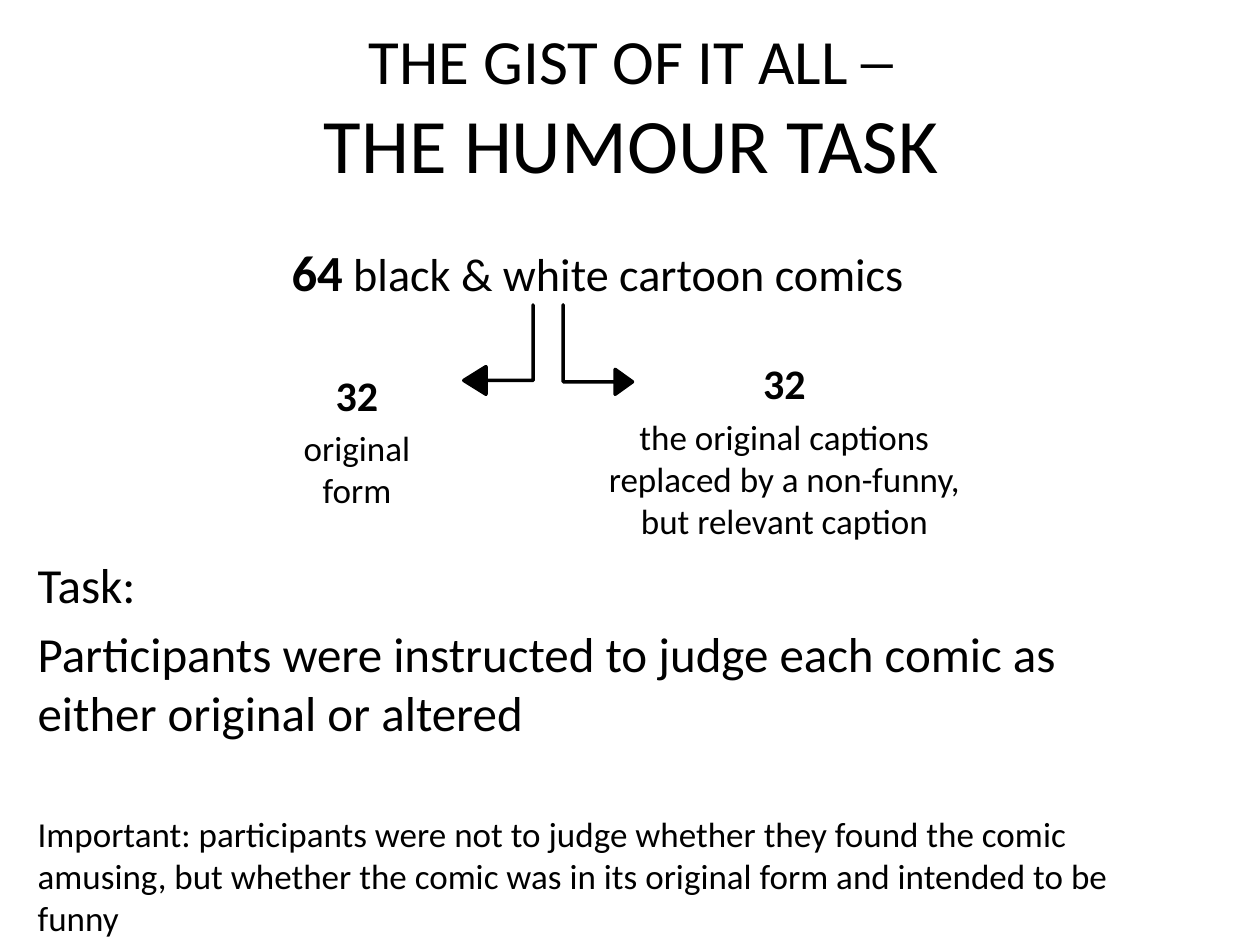
from pptx import Presentation
from pptx.dml.color import RGBColor
from pptx.enum.shapes import MSO_SHAPE
from pptx.enum.text import MSO_ANCHOR, MSO_AUTO_SIZE, PP_ALIGN
from pptx.util import Pt

TOP, MIDDLE, BOTTOM = MSO_ANCHOR.TOP, MSO_ANCHOR.MIDDLE, MSO_ANCHOR.BOTTOM
LEFT, CENTER = PP_ALIGN.LEFT, PP_ALIGN.CENTER
BENT_ARROW = MSO_SHAPE.BENT_ARROW

THEME = {
    "font": "Calibri", "ink": RGBColor(0, 0, 0), "line": 2,
    "title": 44, "kicker": 36, "total": 28.9, "total_label": 26.4,
    "count": 24, "task": 28, "small": 20,
}

TITLE = {
    "box": (36.7, 15.1, 648, 90), "anchor": MIDDLE, "align": CENTER,
    "paragraphs": [(0, [("THE GIST OF IT ALL ─\v", "kicker", False),
                        ("THE HUMOUR TASK", "title", False)])],
}
BODIES = [
    {"box": (26.6, 137.5, 630, 62), "anchor": BOTTOM, "align": CENTER, "bottom": 27,
     "paragraphs": [(0, [("64", "total", True),
                         (" black & white cartoon comics", "total_label", False)])]},
    {"box": (154, 207.5, 100, 108), "anchor": TOP, "align": CENTER,
     "paragraphs": [(0, [("32", "count", True)]),
                    (4, [("original form", "small", False)])]},
    {"box": (14.4, 281.5, 641, 258.5), "anchor": BOTTOM, "align": LEFT,
     "paragraphs": [(0, [("Task:", "task", False)]),
                    (6, [("Participants were instructed to judge each comic as "
                          "either original or altered", "task", False)]),
                    (41, [("Important: participants were not to judge whether they found "
                           "the comic amusing, but whether the comic was in its original "
                           "form and intended to be funny", "small", False)])]},
    {"box": (332, 201, 232.5, 234.5), "anchor": TOP, "align": CENTER,
     "paragraphs": [(0, [("32", "count", True)]),
                    (4, [("the original captions replaced by a non-funny, "
                          "but relevant caption", "small", False)])]},
]
ARROW_TOP, ARROW_WIDTH, ARROW_HEIGHT = 174.2, 39.6, 51.1
ARROWS = [
    {"left": 265, "mirrored": False, "adjustments": (0, 0.2, 0.32, 0)},
    {"left": 321.8, "mirrored": True, "adjustments": (0, 0.18, 0.25, 0)},
]


def set_attributes(target, values):
    for name, value in values.items():
        setattr(target, name, value)


def place(shape, box):
    set_attributes(shape, dict(zip(("left", "top", "width", "height"), map(Pt, box))))


def write(shape, content):
    place(shape, content["box"])
    frame = shape.text_frame
    set_attributes(frame, {
        "word_wrap": True, "auto_size": MSO_AUTO_SIZE.NONE,
        "vertical_anchor": content["anchor"],
        "margin_left": Pt(7.2), "margin_right": Pt(7.2),
        "margin_top": Pt(3.6), "margin_bottom": Pt(content.get("bottom", 3.6)),
    })
    for index, (space, runs) in enumerate(content["paragraphs"]):
        paragraph = frame.add_paragraph() if index else frame.paragraphs[0]
        set_attributes(paragraph, {"alignment": content["align"], "space_before": Pt(space)})
        for text, size, bold in runs:
            run = paragraph.add_run()
            run.text = text.rstrip("\v")
            set_attributes(run.font, {"name": THEME["font"], "size": Pt(THEME[size]), "bold": bold})
            run.font.color.rgb = THEME["ink"]
            if text.endswith("\v"):
                paragraph.add_line_break()


def add_arrow(slide, arrow):
    box = (arrow["left"], ARROW_TOP, ARROW_WIDTH, ARROW_HEIGHT)
    shape = slide.shapes.add_shape(BENT_ARROW, *map(Pt, box))
    shape.rotation = 180
    if arrow["mirrored"]:
        shape.element.spPr.xfrm.set("flipH", "1")
    for index, value in enumerate(arrow["adjustments"]):
        shape.adjustments[index] = value
    shape.shadow.inherit = False
    shape.fill.solid()
    shape.fill.fore_color.rgb = THEME["ink"]
    shape.line.color.rgb = THEME["ink"]
    shape.line.width = Pt(THEME["line"])


def main():
    presentation = Presentation()
    set_attributes(presentation, {"slide_width": Pt(720), "slide_height": Pt(540)})
    slide = presentation.slides.add_slide(presentation.slide_layouts[5])
    write(slide.shapes.title, TITLE)
    for body in BODIES:
        write(slide.shapes.add_textbox(*map(Pt, body["box"])), body)
    for arrow in ARROWS:
        add_arrow(slide, arrow)
    presentation.save("out.pptx")


if __name__ == "__main__":
    main()
